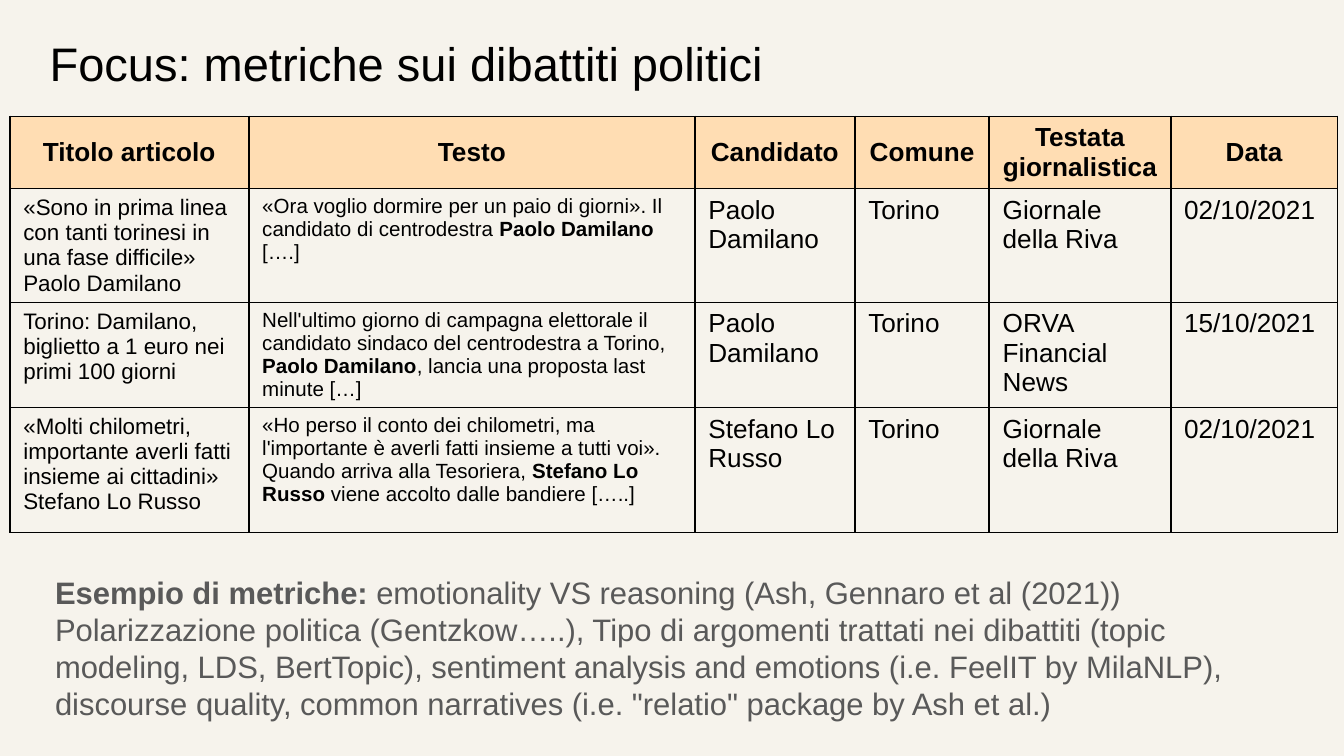
import pptx
import pptx.dml.color
import pptx.enum.text
import pptx.oxml.ns
import pptx.util
from lxml import etree

Pt = pptx.util.Pt
RGBColor = pptx.dml.color.RGBColor
ALIGN = pptx.enum.text.PP_ALIGN
ANCHOR = pptx.enum.text.MSO_ANCHOR
qn = pptx.oxml.ns.qn

BACKGROUND = RGBColor(0xF6, 0xF3, 0xEC)
HEADER_FILL = RGBColor(0xFF, 0xDD, 0xB3)
BLACK = RGBColor(0x00, 0x00, 0x00)
GREY = RGBColor(0x59, 0x59, 0x59)

COLUMN_WIDTHS = [128, 239, 85.7, 72, 97.2, 89.3]
ROW_HEIGHTS = [38.5, 61, 56.3, 67]
COLUMN_SIZES = [12, 11, 14, 14, 14, 14]
HEADER = ["Titolo articolo", "Testo", "Candidato", "Comune", "Testata giornalistica", "Data"]
ARTICLES = [
    ["«Sono in prima linea con tanti torinesi in una fase difficile» Paolo Damilano",
     "«Ora voglio dormire per un paio di giorni». Il candidato di centrodestra **Paolo Damilano** [….]",
     "Paolo Damilano", "Torino", "Giornale della Riva", "02/10/2021"],
    ["Torino: Damilano, biglietto a 1 euro nei primi 100 giorni",
     "Nell'ultimo giorno di campagna elettorale il candidato sindaco del centrodestra a "
     "Torino, **Paolo Damilano**, lancia una proposta last minute […]",
     "Paolo Damilano", "Torino", "ORVA Financial News", "15/10/2021"],
    ["«Molti chilometri, importante averli fatti insieme ai cittadini» Stefano Lo Russo",
     "«Ho perso il conto dei chilometri, ma l'importante è averli fatti insieme a tutti voi». "
     "Quando arriva alla Tesoriera,** Stefano Lo Russo **viene accolto dalle bandiere […..]",
     "Stefano Lo Russo", "Torino", "Giornale della Riva", "02/10/2021"],
]
METRICS = [
    "**Esempio di metriche: **emotionality VS reasoning (Ash, Gennaro et al (2021))",
    "Polarizzazione politica (Gentzkow…..), Tipo di argomenti trattati nei dibattiti (topic "
    "modeling, LDS, BertTopic), sentiment analysis and emotions (i.e. FeelIT by MilaNLP), "
    "discourse quality, common narratives (i.e. \"relatio\" package by Ash et al.)",
]


def write_runs(paragraph, marked_text, size, color, bold=False):
    """Write text into a paragraph, with the parts between double asterisks in bold."""
    for index, part in enumerate(marked_text.split("**")):
        if part:
            run = paragraph.add_run()
            run.text = part
            run.font.name = "Arial"
            run.font.size = Pt(size)
            run.font.bold = bold or index % 2 == 1
            run.font.color.rgb = color


def place(shape, left, top, width, height):
    """Move and size a shape, in points."""
    shape.left, shape.top = Pt(left), Pt(top)
    shape.width, shape.height = Pt(width), Pt(height)


def set_frame(shape, anchor):
    """Give a placeholder's text frame equal insets, wrapping and an anchor."""
    frame = shape.text_frame
    frame.margin_left = frame.margin_right = Pt(7.2)
    frame.margin_top = frame.margin_bottom = Pt(7.2)
    frame.word_wrap = True
    frame.auto_size = pptx.enum.text.MSO_AUTO_SIZE.NONE
    frame.vertical_anchor = anchor
    return frame


def add_title(slide, left, top, width, height):
    """Fill the title placeholder within the given box."""
    title = slide.shapes.title
    place(title, left, top, width, height)
    paragraph = set_frame(title, ANCHOR.MIDDLE).paragraphs[0]
    paragraph.alignment = ALIGN.LEFT
    write_runs(paragraph, "Focus: metriche sui dibattiti politici", 25.2, BLACK)


def set_borders(cell):
    """Draw a thin black line on all four sides of a cell."""
    properties = cell._tc.get_or_add_tcPr()
    for side in ("a:lnL", "a:lnR", "a:lnT", "a:lnB"):
        line = etree.SubElement(properties, qn(side), w=str(Pt(1)))
        fill = etree.SubElement(line, qn("a:solidFill"))
        etree.SubElement(fill, qn("a:srgbClr"), val=str(BLACK))


def add_articles_table(slide, left, top):
    """Add the table of articles with its top left corner at the given point."""
    rows = [HEADER] + ARTICLES
    table = slide.shapes.add_table(
        len(rows), len(HEADER), Pt(left), Pt(top),
        Pt(sum(COLUMN_WIDTHS)), Pt(sum(ROW_HEIGHTS))).table
    table.horz_banding = False
    for column, width in zip(table.columns, COLUMN_WIDTHS):
        column.width = Pt(width)
    for row, height, texts in zip(table.rows, ROW_HEIGHTS, rows):
        row.height = Pt(height)
        is_header = texts is HEADER
        for cell, text, size in zip(row.cells, texts, COLUMN_SIZES):
            set_borders(cell)
            paragraph = cell.text_frame.paragraphs[0]
            if is_header:
                cell.fill.solid()
                cell.fill.fore_color.rgb = HEADER_FILL
                cell.vertical_anchor = ANCHOR.MIDDLE
                paragraph.alignment = ALIGN.CENTER
            else:
                cell.fill.background()
            write_runs(paragraph, text, 14 if is_header else size, BLACK, is_header)


def add_metrics(slide, left, top, width, height):
    """Fill the body placeholder with the metrics within the given box."""
    body = slide.placeholders[1]
    place(body, left, top, width, height)
    frame = set_frame(body, ANCHOR.TOP)
    for index, text in enumerate(METRICS):
        paragraph = frame.add_paragraph() if index else frame.paragraphs[0]
        paragraph.line_spacing = 1.0
        paragraph.space_before = Pt(0)
        properties = paragraph._p.get_or_add_pPr()
        properties.set("marL", str(Pt(8.6)))
        properties.set("indent", "0")
        etree.SubElement(properties, qn("a:buNone"))
        write_runs(paragraph, text, 16.6, GREY)


def main():
    """Build the slide and save the presentation."""
    presentation = pptx.Presentation()
    presentation.slide_width, presentation.slide_height = Pt(720), Pt(405)
    slide = presentation.slides.add_slide(presentation.slide_layouts[1])
    slide.background.fill.solid()
    slide.background.fill.fore_color.rgb = BACKGROUND
    add_title(slide, 19.4, 10.8, 671, 45.4)
    add_metrics(slide, 13.7, 300, 682, 105)
    add_articles_table(slide, 5.3, 62.4)
    presentation.save("out.pptx")


if __name__ == "__main__":
    main()
